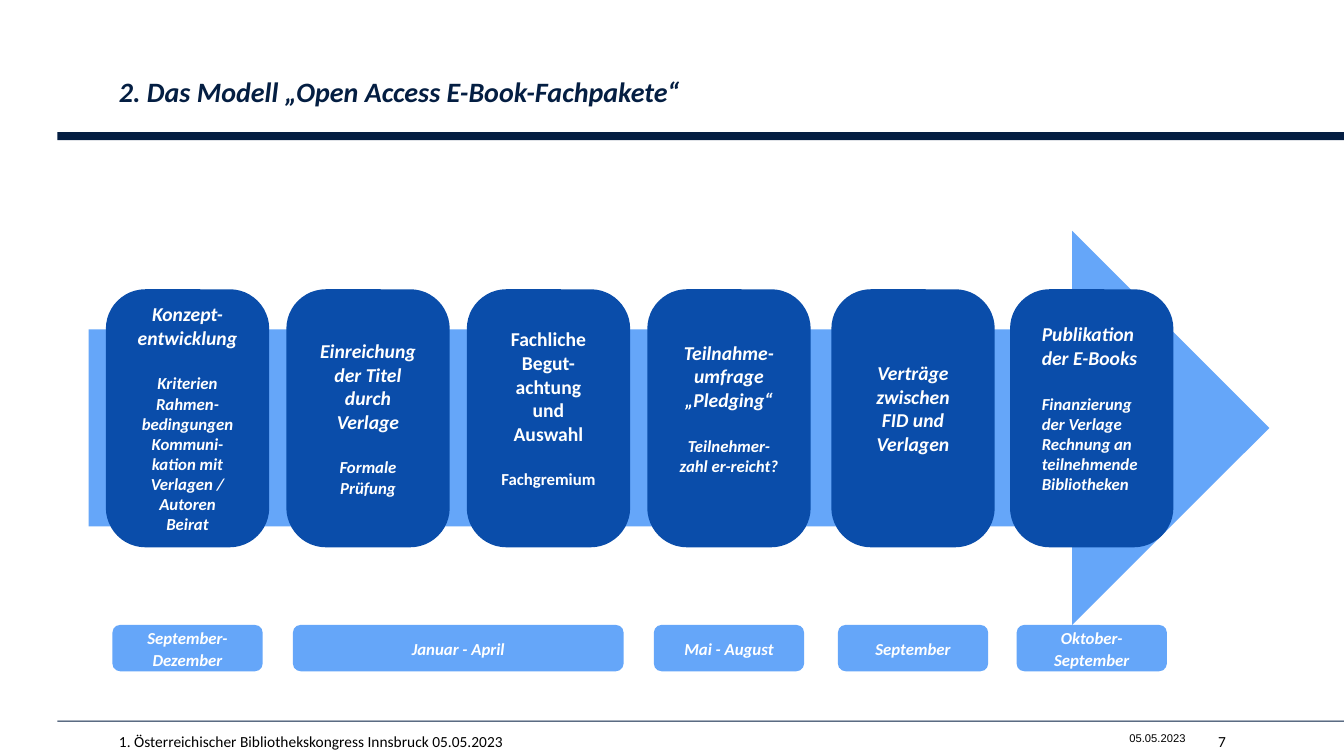
from pptx import Presentation
from pptx.dml.color import RGBColor
from pptx.enum.shapes import MSO_SHAPE
from pptx.enum.text import MSO_ANCHOR, MSO_AUTO_SIZE, PP_ALIGN
from pptx.util import Inches, Pt

RECT, ROUND, ARROW = MSO_SHAPE.RECTANGLE, MSO_SHAPE.ROUNDED_RECTANGLE, MSO_SHAPE.RIGHT_ARROW
TOP, MIDDLE = MSO_ANCHOR.TOP, MSO_ANCHOR.MIDDLE
LEFT, CENTER, RIGHT = PP_ALIGN.LEFT, PP_ALIGN.CENTER, PP_ALIGN.RIGHT

HEX = {"navy": "041E42", "blue": "0A4DAA", "sky": "65A6F9", "white": "FFFFFF", "black": "000000"}
WIDE, HIGH = 13.33, 7.5
EDGE, PITCH = 1.05, 1.79  # left edge of the first column, column step
CARD_W, CARD_H, CARD_Y = 1.62, 2.56, 2.87
TAG_W, TAG_H, TAG_Y = 1.49, 0.46, 6.2
PAD, LINE = 0.2, 0.2  # text inset, height of one small line

# column, heading lines, detail lines, italic, alignment, free lines below
CARDS = [
    (0, ["Konzept-entwicklung"],
     ["Kriterien", "Rahmen-bedingungen", "Kommuni-kation mit Verlagen / Autoren", "Beirat"],
     True, CENTER, 0),
    (1, ["Einreichung der Titel durch Verlage"], ["Formale Prüfung"], True, CENTER, 0),
    (2, ["Fachliche Begut-achtung und Auswahl"], ["Fachgremium"], False, CENTER, 1),
    (3, ["Teilnahme-umfrage", "„Pledging“"], ["Teilnehmer-zahl er-reicht?"], True, CENTER, 1),
    (4.02, ["Verträge zwischen", "FID und Verlagen"], [], True, CENTER, 1),
    (5.01, ["Publikation der E-Books"],
     ["Finanzierung der Verlage", "Rechnung an teilnehmende Bibliotheken"], True, LEFT, 1),
]
# column, columns spanned, text
TAGS = [
    (0, 1, "September- Dezember"),
    (1, 2, "Januar - April"),
    (3, 1, "Mai - August"),
    (4.02, 1, "September"),
    (5.01, 1, "Oktober-September"),
]
# left, width, height, text, size, font, alignment, wrap
NOTES = [
    (11.19, 0.57, 0.13, "05.05.2023", 8, "Arial", RIGHT, False),
    (1.18, 5.38, 0.19, "1. Österreichischer Bibliothekskongress Innsbruck 05.05.2023",
     11, "Calibri", LEFT, True),
    (12.08, 0.08, 0.19, "7", 11, "Calibri", RIGHT, False),
]


class Deck:
    def __init__(self):
        self.file = Presentation()
        self.file.slide_width, self.file.slide_height = Inches(WIDE), Inches(HIGH)
        self.slide = self.file.slides.add_slide(self.file.slide_layouts[5])

    def col(self, n):
        return EDGE + n * PITCH

    def frame(self, shape, pads, anchor, wrap=True):
        """Set insets (left, top, right, bottom), anchor and wrapping."""
        text = shape.text_frame
        text.margin_left, text.margin_top, text.margin_right, text.margin_bottom = map(Inches, pads)
        text.vertical_anchor, text.word_wrap = anchor, wrap
        text.auto_size = MSO_AUTO_SIZE.NONE
        return text

    def style(self, para, size, color, align=LEFT, bold=False, slant=False, face="Calibri"):
        para.alignment = align
        for run in para.runs:
            font = run.font
            font.name, font.size, font.bold, font.italic = face, Pt(size), bold, slant
            font.color.rgb = RGBColor.from_string(HEX[color])

    def shape(self, kind, box, color):
        shape = self.slide.shapes.add_shape(kind, *map(Inches, box))
        shape.shadow.inherit = False
        shape.fill.solid()
        shape.fill.fore_color.rgb = RGBColor.from_string(HEX[color])
        shape.line.fill.background()
        return shape

    def title(self, text):
        shape = self.slide.shapes.title
        shape.left, shape.top, shape.width, shape.height = map(Inches, (1.18, 0.71, 9.53, 0.35))
        frame = self.frame(shape, (0, 0, 0.39, 0), TOP)
        frame.text = text
        para = frame.paragraphs[0]
        para.line_spacing, para.space_after = 1.1, Pt(8)
        self.style(para, 20, "navy", bold=True, slant=True)

    def note(self, left, width, height, text, size, face, align, wrap):
        box = self.slide.shapes.add_textbox(*map(Inches, (left, 7.26, width, height)))
        frame = self.frame(box, (0, 0, 0, 0), TOP, wrap)
        frame.text = text
        self.style(frame.paragraphs[0], size, "black", align, face=face)

    def card(self, col, heads, facts, slant, align, free):
        shape = self.shape(ROUND, (self.col(col), CARD_Y, CARD_W, CARD_H), "blue")
        shape.adjustments[0] = 0.242
        frame = self.frame(shape, (PAD, PAD, PAD, PAD + free * LINE), MIDDLE)
        frame.text = "\n".join(heads + facts)
        for i, para in enumerate(frame.paragraphs):
            self.style(para, 14 if i < len(heads) else 12, "white", align, True, slant)
            if i == len(heads):
                para.space_before = Pt(17)

    def tag(self, col, span, text):
        left = self.col(col) + (CARD_W - TAG_W) / 2
        shape = self.shape(ROUND, (left, TAG_Y, (span - 1) * PITCH + TAG_W, TAG_H), "sky")
        frame = self.frame(shape, (PAD, PAD, PAD, PAD), MIDDLE)
        frame.text = text
        para = frame.paragraphs[0]
        para.line_spacing, para.space_after = 1.1, Pt(12)
        self.style(para, 12, "white", CENTER, True, True)


def main():
    deck = Deck()
    for top, thick in ((1.31, 0.08), (7.15, 0.01)):
        deck.shape(RECT, (0.57, top, WIDE - 0.57, thick), "navy")
    deck.title("2. Das Modell „Open Access E-Book-Fachpakete“")
    for note in NOTES:
        deck.note(*note)
    deck.shape(ARROW, (0.88, 2.29, 11.71, 3.91), "sky")
    for card in CARDS:
        deck.card(*card)
    for tag in TAGS:
        deck.tag(*tag)
    deck.file.save("out.pptx")


if __name__ == "__main__":
    main()
